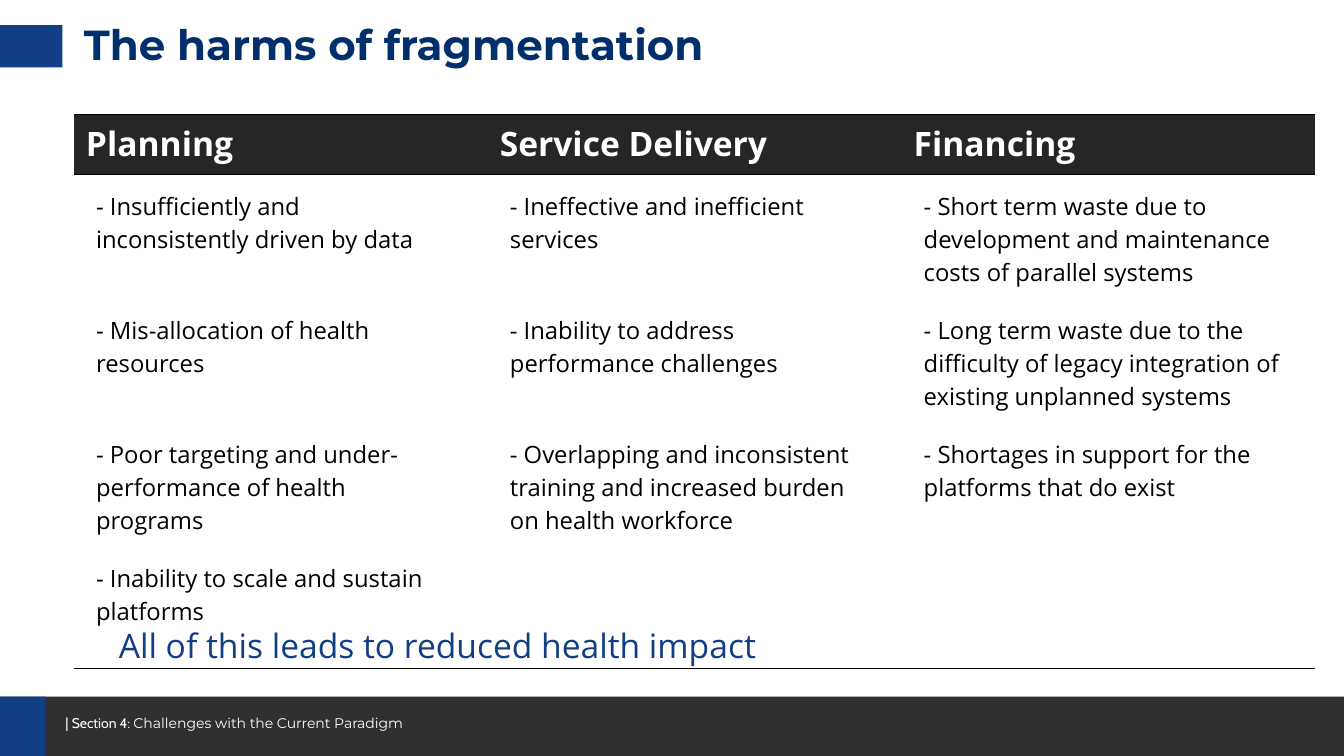
import pptx
import pptx.dml.color
import pptx.enum.shapes
import pptx.enum.text
import pptx.oxml
import pptx.oxml.ns
import pptx.util

TITLE = "The harms of fragmentation"
CONCLUSION = "All of this leads to reduced health impact"
SECTION = "| Section 4: "
SECTION_NAME = "Challenges with the Current Paradigm"
HARMS = {
    "Planning": [
        "- Insufficiently and inconsistently driven by data",
        "- Mis-allocation of health resources",
        "- Poor targeting and under-performance of health programs",
        "- Inability to scale and sustain platforms",
    ],
    "Service Delivery": [
        "- Ineffective and inefficient services",
        "- Inability to address performance challenges",
        "- Overlapping and inconsistent training and increased burden on health workforce",
    ],
    "Financing": [
        "- Short term waste due to development and maintenance costs of parallel systems",
        "- Long term waste due to the difficulty of legacy integration of existing unplanned systems",
        "- Shortages in support for the platforms that do exist",
    ],
}
COLORS = {
    "white": "FFFFFF", "black": "000000", "blue": "123E85",
    "navy": "002F6C", "footer": "303030", "header": "262626",
}
FORMATS = {
    "title": {"name": "Montserrat", "size": 30, "bold": True, "color": "navy"},
    "conclusion": {"name": "Open Sans", "size": 24, "bold": False, "color": "blue"},
    "header": {"name": "Open Sans", "size": 24, "bold": True, "color": "white"},
    "harm": {"name": "Open Sans", "size": 17, "bold": False, "color": "black"},
    "section": {"name": "Cabin", "size": 10, "bold": False, "color": "white"},
    "section_name": {"name": "Montserrat", "size": 10, "bold": False, "color": "white"},
}
SIDES = ("left", "top", "right", "bottom")
HEADER_MARGINS = (8.64, 4.32, 8.64, 4.32)
HARM_MARGINS = (15.84, 11.52, 23.04, 7.2)
PAGE_WIDTH, PAGE_HEIGHT = 960, 540
FOOTER_TOP = 497.5
TABLE_LEFT, TABLE_TOP, COLUMN_WIDTH = 52.8, 82, 295.6
ROW_HEIGHTS = (42.5, 88.6, 88.6, 88.6, 87.5)
NO_STYLE = "{2D5ABB26-0587-4C30-8999-92F81FD0307C}"

Pt = pptx.util.Pt


def rgb(color):
    return pptx.dml.color.RGBColor.from_string(COLORS[color])


def add_span(para, text, format_name):
    span = para.add_run()
    span.text = text
    for key, value in FORMATS[format_name].items():
        if key == "color":
            span.font.color.rgb = rgb(value)
        else:
            setattr(span.font, key, Pt(value) if key == "size" else value)


def set_margins(holder, margins):
    for side, margin in zip(SIDES, margins):
        setattr(holder, "margin_" + side, Pt(margin))


def add_bar(page, place, color):
    bar = page.shapes.add_shape(
        pptx.enum.shapes.MSO_SHAPE.RECTANGLE, *map(Pt, place))
    bar.shadow.inherit = False
    bar.fill.solid()
    bar.fill.fore_color.rgb = rgb(color)
    bar.line.fill.background()


def add_text(page, place, spans, margin, anchor):
    frame = page.shapes.add_textbox(*map(Pt, place)).text_frame
    frame.word_wrap = True
    frame.vertical_anchor = anchor
    set_margins(frame, [margin] * 4)
    for text, format_name in spans:
        add_span(frame.paragraphs[0], text, format_name)


def add_borders(cell, tags):
    properties = cell._tc.get_or_add_tcPr()
    for position, tag in enumerate(tags):
        properties.insert(position, pptx.oxml.parse_xml(
            f'<a:{tag} {pptx.oxml.ns.nsdecls("a")} w="12700"><a:solidFill>'
            f'<a:srgbClr val="{COLORS["black"]}"/></a:solidFill></a:{tag}>'))


def add_harms(page):
    frame = page.shapes.add_table(
        len(ROW_HEIGHTS), len(HARMS), Pt(TABLE_LEFT), Pt(TABLE_TOP),
        Pt(COLUMN_WIDTH * len(HARMS)), Pt(sum(ROW_HEIGHTS)))
    table = frame.table
    table.first_row = table.horz_banding = False
    table._tbl.tblPr.find(pptx.oxml.ns.qn("a:tableStyleId")).text = NO_STYLE
    for row, height in zip(table.rows, ROW_HEIGHTS):
        row.height = Pt(height)
    last_row = len(ROW_HEIGHTS) - 1
    for column, (heading, harms) in enumerate(HARMS.items()):
        table.columns[column].width = Pt(COLUMN_WIDTH)
        texts = [heading] + harms
        for row in range(len(ROW_HEIGHTS)):
            cell = table.cell(row, column)
            is_header = row == 0
            set_margins(cell, HEADER_MARGINS if is_header else HARM_MARGINS)
            cell.fill.solid()
            cell.fill.fore_color.rgb = rgb("header" if is_header else "white")
            if row < len(texts):
                add_span(cell.text_frame.paragraphs[0], texts[row],
                         "header" if is_header else "harm")
            if is_header:
                add_borders(cell, ["lnT", "lnB"])
            elif row == last_row:
                add_borders(cell, ["lnB"])


def main():
    deck = pptx.Presentation()
    deck.slide_width, deck.slide_height = Pt(PAGE_WIDTH), Pt(PAGE_HEIGHT)
    page = deck.slides.add_slide(deck.slide_layouts[6])
    anchors = pptx.enum.text.MSO_ANCHOR
    footer_height = PAGE_HEIGHT - FOOTER_TOP
    add_bar(page, (0, FOOTER_TOP, PAGE_WIDTH, footer_height), "footer")
    add_bar(page, (0, FOOTER_TOP, 32.4, footer_height), "blue")
    add_text(page, (46.8, 510.5, 522.7, 14.4),
             [(SECTION, "section"), (SECTION_NAME, "section_name")], 0, anchors.TOP)
    add_harms(page)
    add_bar(page, (0, 18, 44.6, 30.2), "blue")
    add_text(page, (77.8, 434.2, 815.8, 48.2),
             [(CONCLUSION, "conclusion")], 7.2, anchors.BOTTOM)
    add_text(page, (TABLE_LEFT, 8.6, 815.8, 48.2),
             [(TITLE, "title")], 7.2, anchors.BOTTOM)
    deck.save("out.pptx")


if __name__ == "__main__":
    main()
